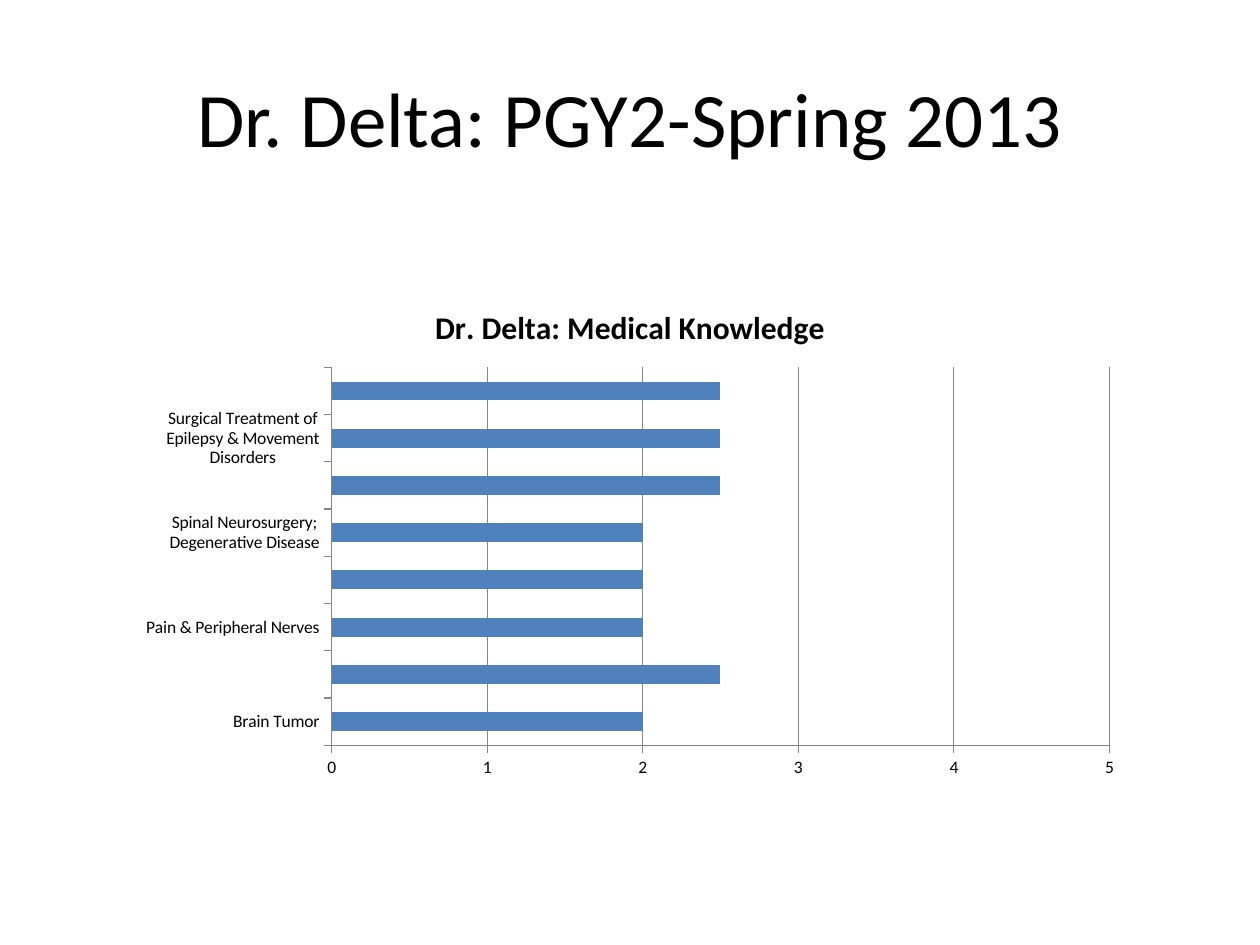
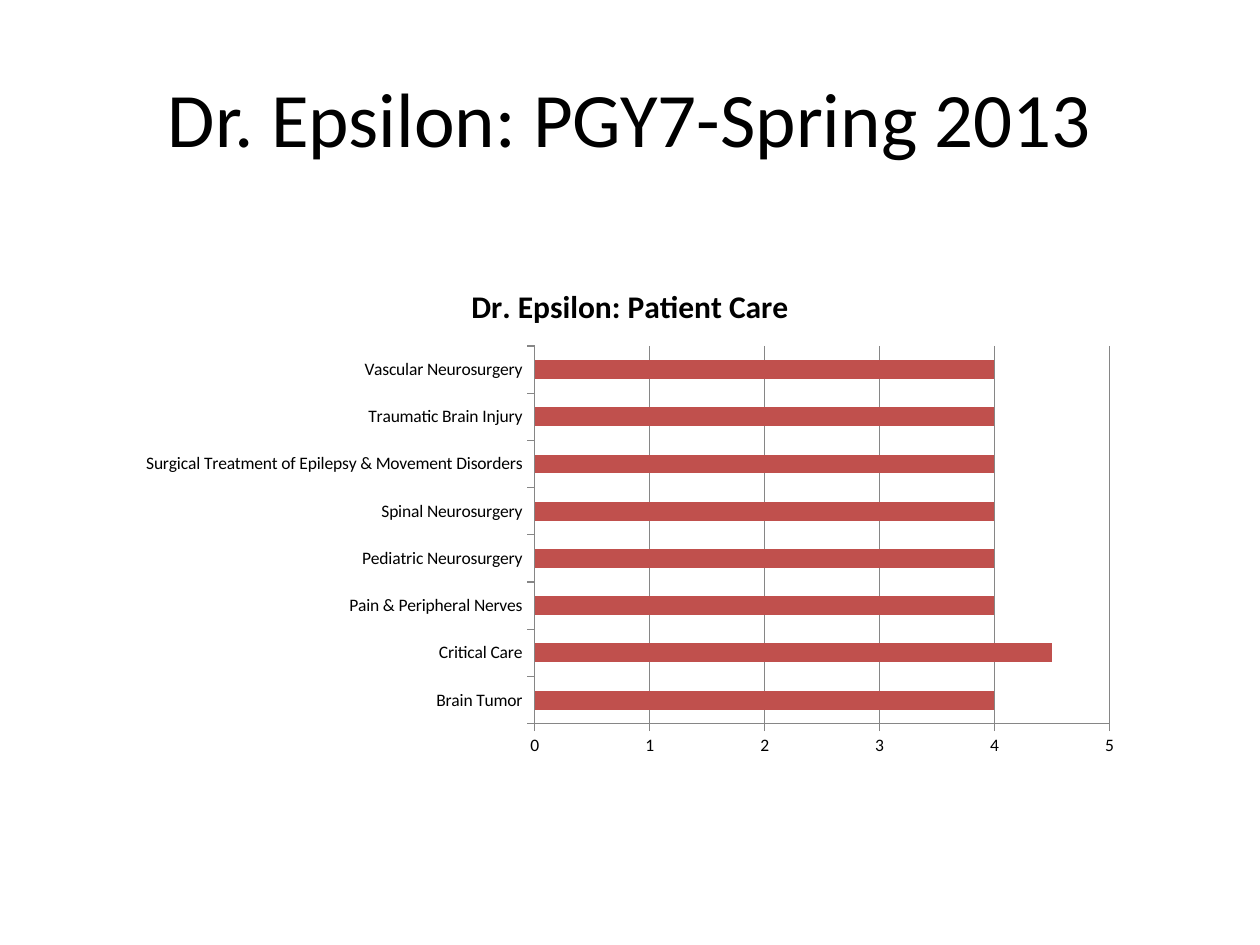
from pptx import Presentation
from pptx.chart.data import CategoryChartData as ChartData
from pptx.dml.color import RGBColor
from pptx.enum.chart import XL_CHART_TYPE as Kind, XL_TICK_MARK as Tick
from pptx.enum.text import MSO_ANCHOR as Anchor, PP_ALIGN as Align
from pptx.util import Inches, Pt

BLACK = RGBColor(0x00, 0x00, 0x00)
GRAY = RGBColor(0x86, 0x86, 0x86)
BLUE = RGBColor(0x4F, 0x81, 0xBD)
RED = RGBColor(0xC0, 0x50, 0x4D)
FONT = "Calibri"

TUMOR = "Brain Tumor"
NERVES = "Pain & Peripheral Nerves"
EPILEPSY = "Surgical Treatment of Epilepsy & Movement Disorders"
DELTA = [
    TUMOR, "",
    NERVES, "",
    "Spinal Neurosurgery; Degenerative Disease", "",
    EPILEPSY, "",
]
EPSILON = [
    TUMOR,
    "Critical Care",
    NERVES,
    "Pediatric Neurosurgery",
    "Spinal Neurosurgery",
    EPILEPSY,
    "Traumatic Brain Injury",
    "Vascular Neurosurgery",
]

REPORTS = [
    ("Dr. Delta: PGY2-Spring 2013", "Dr. Delta: Medical Knowledge", 2.25, BLUE,
     DELTA, [2, 2.5, 2, 2, 2, 2.5, 2.5, 2.5]),
    ("Dr. Epsilon: PGY7-Spring 2013", "Dr. Epsilon: Patient Care", 2.08, RED,
     EPSILON, [4, 4.5, 4, 4, 4, 4, 4, 4]),
]


def style(font, size, bold=False):
    font.name = FONT
    font.size = Pt(size)
    font.bold = bold
    font.color.rgb = BLACK


deck = Presentation()
deck.slide_width, deck.slide_height = Inches(10), Inches(7.5)

for heading, caption, top, color, topics, scores in REPORTS:
    slide = deck.slides.add_slide(deck.slide_layouts[5])
    title = slide.shapes.title
    title.left, title.top = Inches(0.5), Inches(0.3)
    title.width, title.height = Inches(9), Inches(1.25)
    frame = title.text_frame
    frame.text = heading
    frame.vertical_anchor = Anchor.MIDDLE
    frame.paragraphs[0].alignment = Align.CENTER
    style(frame.paragraphs[0].runs[0].font, 44)

    data = ChartData()
    data.categories = topics
    data.add_series("Series 1", scores)
    chart = slide.shapes.add_chart(
        Kind.BAR_CLUSTERED, Inches(1), Inches(top), Inches(8), Inches(4), data
    ).chart
    style(chart.font, 10)
    chart.has_legend = False
    chart.has_title = True
    label = chart.chart_title.text_frame
    label.text = caption
    style(label.paragraphs[0].runs[0].font, 18, True)
    chart.chart_title.include_in_layout = False

    plot = chart.plots[0]
    plot.gap_width = 150
    plot.vary_by_categories = False
    fill = plot.series[0].format.fill
    fill.solid()
    fill.fore_color.rgb = color

    scale = chart.value_axis
    scale.minimum_scale, scale.maximum_scale, scale.major_unit = 0, 5, 1
    scale.tick_labels.number_format = "0"
    scale.tick_labels.number_format_is_linked = False
    scale.has_major_gridlines = True
    chart.category_axis.has_major_gridlines = False
    for axis in (scale, chart.category_axis):
        axis.major_tick_mark = Tick.OUTSIDE
        axis.minor_tick_mark = Tick.NONE
    for part in (scale, chart.category_axis, scale.major_gridlines):
        part.format.line.color.rgb = GRAY
        part.format.line.width = Pt(0.75)

deck.save("out.pptx")
